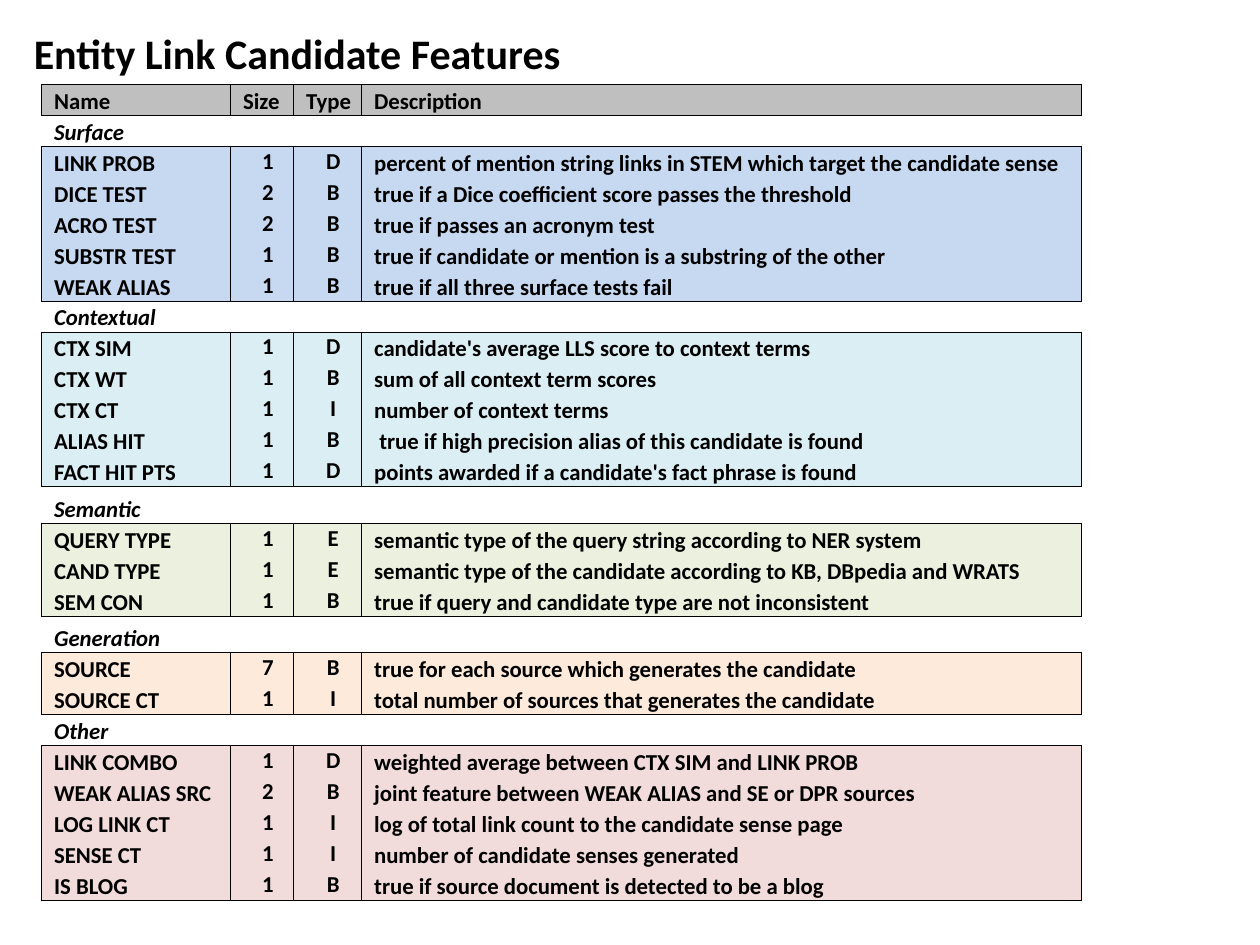
from lxml.etree import SubElement
from pptx import Presentation
from pptx.dml.color import RGBColor
from pptx.enum.text import MSO_ANCHOR as Anchor, PP_ALIGN as Align
from pptx.oxml.ns import qn
from pptx.util import Inches, Pt

BLACK = RGBColor(0x00, 0x00, 0x00)
GRAY = RGBColor(0xBF, 0xBF, 0xBF)
BLUE = RGBColor(0xC6, 0xD9, 0xF1)
AQUA = RGBColor(0xDB, 0xEE, 0xF4)
GREEN = RGBColor(0xEB, 0xF1, 0xDE)
ORANGE = RGBColor(0xFD, 0xEA, 0xDA)
PINK = RGBColor(0xF2, 0xDC, 0xDB)

HEADINGS = ("Name", "Size", "Type", "Description")
COLUMN_WIDTHS = (1.5, 0.5, 0.54, 5.71)
TABLE_HEIGHT, TALL_ROW = 6.48, 0.29
TALL_SECTIONS = ("Semantic", "Generation")

SECTIONS = [
    ("Surface", BLUE, [
        ("LINK PROB", "1", "D", "percent of mention string links in STEM which target the candidate sense"),
        ("DICE TEST", "2", "B", "true if a Dice coefficient score passes the threshold"),
        ("ACRO TEST", "2", "B", "true if passes an acronym test"),
        ("SUBSTR TEST", "1", "B", "true if candidate or mention is a substring of the other"),
        ("WEAK ALIAS", "1", "B", "true if all three surface tests fail"),
    ]),
    ("Contextual", AQUA, [
        ("CTX SIM", "1", "D", "candidate's average LLS score to context terms"),
        ("CTX WT", "1", "B", "sum of all context term scores"),
        ("CTX CT", "1", "I", "number of context terms"),
        ("ALIAS HIT", "1", "B", " true if high precision alias of this candidate is found"),
        ("FACT HIT PTS", "1", "D", "points awarded if a candidate's fact phrase is found"),
    ]),
    ("Semantic", GREEN, [
        ("QUERY TYPE", "1", "E", "semantic type of the query string according to NER system"),
        ("CAND TYPE", "1", "E", "semantic type of the candidate according to KB, DBpedia and WRATS"),
        ("SEM CON", "1", "B", "true if query and candidate type are not inconsistent"),
    ]),
    ("Generation", ORANGE, [
        ("SOURCE", "7", "B", "true for each source which generates the candidate"),
        ("SOURCE CT", "1", "I", "total number of sources that generates the candidate"),
    ]),
    ("Other", PINK, [
        ("LINK COMBO", "1", "D", "weighted average between CTX SIM and LINK PROB"),
        ("WEAK ALIAS SRC", "2", "B", "joint feature between WEAK ALIAS and SE or DPR sources"),
        ("LOG LINK CT", "1", "I", "log of total link count to the candidate sense page"),
        ("SENSE CT", "1", "I", "number of candidate senses generated"),
        ("IS BLOG", "1", "B", "true if source document is detected to be a blog"),
    ]),
]


def add_text(paragraph, text, size, italic=False):
    run = paragraph.add_run()
    run.text = text
    run.font.name = "Calibri"
    run.font.size = Pt(size)
    run.font.bold = True
    run.font.italic = italic
    run.font.color.rgb = BLACK


def format_cell(cell, sides, fill=None):
    """Draw thin black borders on the given sides (L, R, T, B) and set the fill."""
    cell.margin_left = Inches(0.1)
    cell.margin_top = cell.margin_right = Inches(0.01)
    cell.margin_bottom = 0
    properties = cell._tc.get_or_add_tcPr()
    for side in "LRTB":
        line = SubElement(properties, qn(f"a:ln{side}"), w=str(Pt(0.5)))
        if side in sides:
            color = SubElement(line, qn("a:solidFill"))
            SubElement(color, qn("a:srgbClr"), val=str(BLACK))
        else:
            SubElement(line, qn("a:noFill"))
    if fill is None:
        cell.fill.background()
    else:
        cell.fill.solid()
        cell.fill.fore_color.rgb = fill


prs = Presentation()
prs.slide_width, prs.slide_height = Inches(10), Inches(7.5)
slide = prs.slides.add_slide(prs.slide_layouts[6])

# Title
title = slide.shapes.add_textbox(Inches(0.17), Inches(0.17), Inches(8), Inches(0.5)).text_frame
title.word_wrap = True
title.vertical_anchor = Anchor.MIDDLE
add_text(title.paragraphs[0], "Entity Link Candidate Features", 24)

# Rows of the table: values, fill, top and bottom borders
rows = [(HEADINGS, GRAY, "TB")]
for section, tint, features in SECTIONS:
    rows.append(((section,), None, "TB"))
    for i, feature in enumerate(features):
        edges = ("T" if i == 0 else "") + ("B" if i == len(features) - 1 else "")
        rows.append((feature, tint, edges))

# Table grid
table = slide.shapes.add_table(
    len(rows), len(HEADINGS), Inches(0.33), Inches(0.67),
    Inches(sum(COLUMN_WIDTHS)), Inches(TABLE_HEIGHT)).table
table.first_row = table.horz_banding = False
for column, width in zip(table.columns, COLUMN_WIDTHS):
    column.width = Inches(width)
tall_count = len(TALL_SECTIONS)
row_height = (TABLE_HEIGHT - tall_count * TALL_ROW) / (len(rows) - tall_count)

# Table contents
for r, (values, tint, edges) in enumerate(rows):
    is_section = len(values) == 1
    table.rows[r].height = Inches(TALL_ROW if values[0] in TALL_SECTIONS else row_height)
    for c in range(len(HEADINGS)):
        format_cell(table.cell(r, c), edges if is_section else edges + "LR", tint)
    if is_section:
        table.cell(r, 0).merge(table.cell(r, len(HEADINGS) - 1))
    for c, value in enumerate(values):
        cell = table.cell(r, c)
        paragraph = cell.text_frame.paragraphs[0]
        if r > 0 and c in (1, 2):
            paragraph.alignment = Align.CENTER
            cell.vertical_anchor = Anchor.TOP
        else:
            cell.vertical_anchor = Anchor.BOTTOM
        add_text(paragraph, value, 13, italic=is_section)

prs.save("out.pptx")
